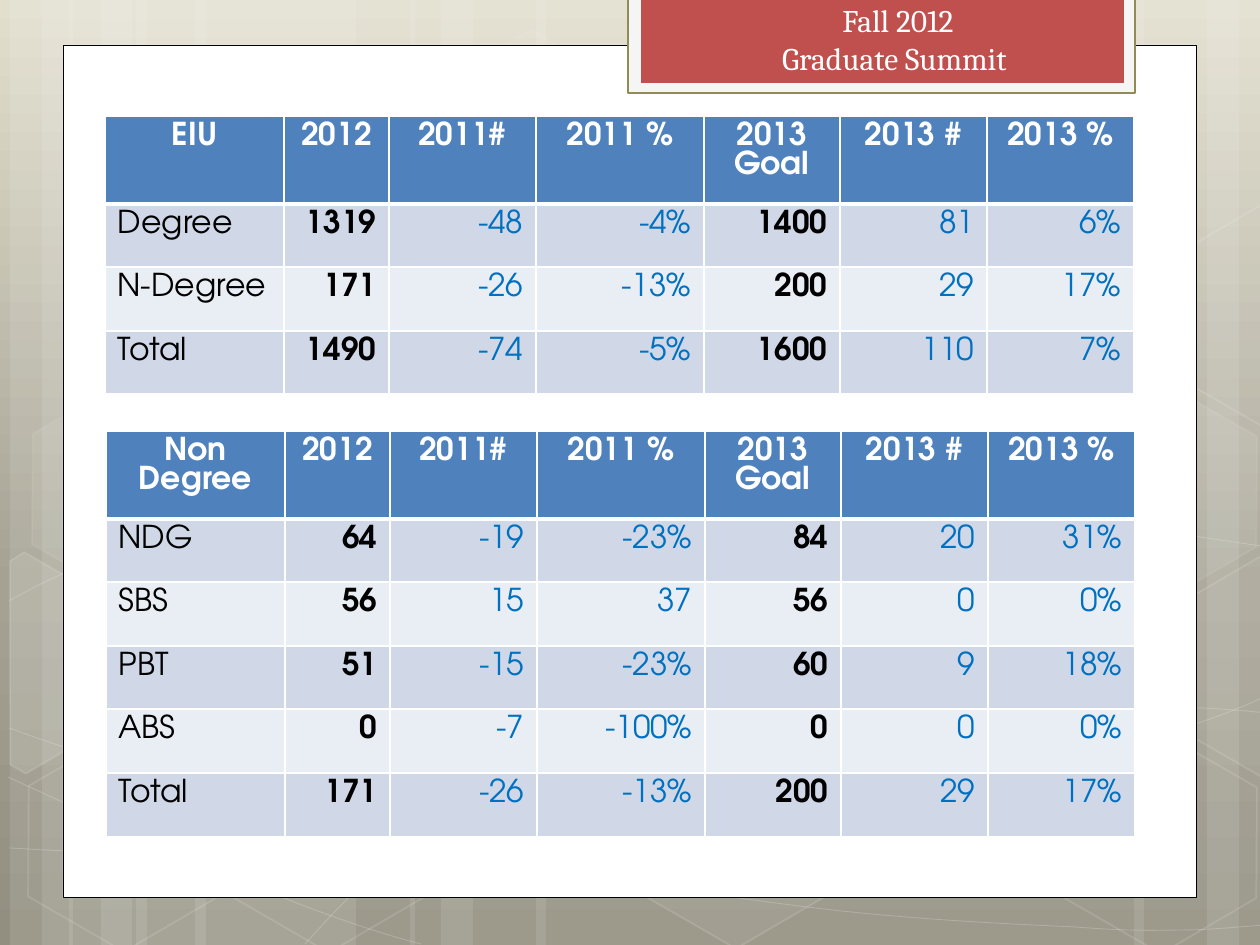
from copy import deepcopy
from dataclasses import dataclass

from lxml.etree import SubElement
from pptx import Presentation
from pptx.dml.color import RGBColor
from pptx.enum.shapes import MSO_SHAPE
from pptx.enum.text import MSO_ANCHOR, MSO_AUTO_SIZE, PP_ALIGN
from pptx.oxml.ns import qn
from pptx.util import Emu, Pt

SCALE = 914400 / 126
WHITE, BLACK, BLUE = "FFFFFF", "000000", "0070C0"
HEADER_FILL, BAND_FILLS = "4F81BD", ("D0D8E8", "E9EDF4")
COLUMN_WIDTHS = (179, 105, 147, 168, 136, 147, 147)
ROW_HEIGHTS = (88, 63, 64, 63, 64, 64)
BOLD_COLUMNS = (1, 4)
HEADINGS = ("2012", "2011#", "2011 %", "2013 Goal", "2013 #", "2013 %")


@dataclass
class Paint:
    fill: str = ""
    fill_opacity: int = 100
    line: str = ""
    line_width: float = 1
    line_opacity: int = 100


@dataclass
class Hexagon:
    left: int
    top: int
    fill_opacity: int
    line_opacity: int


@dataclass
class CutHexagon:
    points: tuple
    fill_opacity: int


@dataclass
class EnrollmentTable:
    left: int
    top: int
    title: str
    rows: tuple


BARS = (
    (136, 220), (10, 63), (42, 105), (195, 220), (69, 63), (101, 105),
    (924, 220), (1207, 63), (1134, 105), (536, 388), (410, 63), (441, 105),
)
CURVES = (
    ((9, 848), (77, 852), (145, 855), (239, 854), (334, 853), (451, 851), (577, 838),
     (703, 825), (882, 801), (998, 777), (1113, 753), (1231, 716), (1269, 694)),
    ((9, 601), (45, 581), (82, 562), (152, 543), (224, 524), (326, 496), (437, 488),
     (549, 479), (685, 478), (824, 488), (963, 498), (1193, 537), (1269, 547)),
    ((8, 777), (160, 847), (311, 916), (421, 944)),
    ((9, 728), (48, 742), (88, 756), (161, 776), (234, 795), (344, 827), (450, 848),
     (554, 869), (687, 892), (791, 905), (896, 919), (1008, 924), (1075, 927),
     (1140, 932), (1158, 930), (1191, 930), (1223, 929), (1246, 926), (1269, 925)),
    ((305, 944), (328, 919), (350, 893), (381, 871), (411, 848), (454, 824), (489, 805),
     (524, 787), (546, 780), (592, 767), (638, 755), (722, 737), (766, 728),
     (811, 719), (818, 719), (857, 717), (896, 713), (958, 709), (1000, 708),
     (1045, 707), (1116, 708), (1116, 708), (1144, 708), (1173, 708), (1201, 708),
     (1223, 709), (1245, 711), (1256, 712), (1268, 713), (1264, 712), (1268, 713)),
)
HEXAGONS = (
    Hexagon(421, 45, 4, 8), Hexagon(626, 742, 6, 12), Hexagon(14, 745, 0, 12),
    Hexagon(18, 393, 7, 8), Hexagon(219, 746, 0, 12), Hexagon(949, 571, 10, 12),
    Hexagon(1051, 747, 0, 12), Hexagon(1051, 396, 7, 8),
)
RIGHT_CUT = ((1155, 654), (1209, 559), (1221, 559), (1326, 741), (1321, 750), (1210, 750))
CUT_HEXAGONS = (
    CutHexagon(((-42, 594), (-34, 579), (77, 579), (132, 675), (78, 770), (60, 770)), 10),
    CutHexagon(RIGHT_CUT, 4),
    CutHexagon(tuple((x, y - 351) for x, y in RIGHT_CUT), 0),
)
TABLES = (
    EnrollmentTable(105, 116, "EIU", (
        ("Degree", "1319", "-48", "-4%", "1400", "81", "6%"),
        ("N-Degree", "171", "-26", "-13%", "200", "29", "17%"),
        ("Total", "1490", "-74", "-5%", "1600", "110", "7%"),
    )),
    EnrollmentTable(106, 431, "Non Degree", (
        ("NDG", "64", "-19", "-23%", "84", "20", "31%"),
        ("SBS", "56", "15", "37", "56", "0", "0%"),
        ("PBT", "51", "-15", "-23%", "60", "9", "18%"),
        ("ABS", "0", "-7", "-100%", "0", "0", "0%"),
        ("Total", "171", "-26", "-13%", "200", "29", "17%"),
    )),
)


def px(length: int) -> Emu:
    return Emu(round(length * SCALE))


def color(value: str) -> RGBColor:
    return RGBColor.from_string(value)


def set_opacity(shape, location: str, percent: int) -> None:
    if percent < 100:
        for item in shape.element.xpath(f"./p:spPr/{location}a:solidFill/a:srgbClr"):
            SubElement(item, qn("a:alpha"), val=str(percent * 1000))


def apply_paint(shape, paint: Paint) -> None:
    shape.shadow.inherit = False
    if paint.fill and paint.fill_opacity:
        shape.fill.solid()
        shape.fill.fore_color.rgb = color(paint.fill)
        set_opacity(shape, "", paint.fill_opacity)
    else:
        shape.fill.background()
    if paint.line:
        shape.line.color.rgb = color(paint.line)
        shape.line.width = Pt(paint.line_width)
        set_opacity(shape, "a:ln/", paint.line_opacity)
    else:
        shape.line.fill.background()


def draw_shape(page, kind, left: int, top: int, width: int, height: int, paint: Paint):
    shape = page.shapes.add_shape(kind, px(left), px(top), px(width), px(height))
    apply_paint(shape, paint)
    return shape


def draw_outline(page, points: tuple, closed: bool, paint: Paint):
    builder = page.shapes.build_freeform(*points[0], scale=SCALE)
    builder.add_line_segments(points[1:], close=closed)
    shape = builder.convert_to_shape()
    apply_paint(shape, paint)
    return shape


def draw_curve(page, points: tuple) -> None:
    shape = draw_outline(page, points, False, Paint(line=WHITE, line_width=0.5, line_opacity=20))
    outline = shape.element.xpath(".//a:path")[0]
    segments = outline.findall(qn("a:lnTo"))
    for start in range(0, len(segments), 3):
        bezier = SubElement(outline, qn("a:cubicBezTo"))
        for segment in segments[start:start + 3]:
            bezier.append(segment[0])
            outline.remove(segment)


def draw_background(page) -> None:
    fill = page.background.fill
    fill.gradient()
    fill.gradient_angle = 270
    stops = page.element.xpath(".//a:gsLst")[0]
    stops.append(deepcopy(stops[-1]))
    shades = ((0, "E2DFCF"), (0.62, "A5A293"), (1, "928F80"))
    for stop, (position, shade) in zip(fill.gradient_stops, shades):
        stop.position = position
        stop.color.rgb = color(shade)
    for left, width in BARS:
        draw_shape(page, MSO_SHAPE.RECTANGLE, left, 0, width, 945, Paint(WHITE, 10))
    for curve in CURVES:
        draw_curve(page, curve)
    for item in HEXAGONS:
        paint = Paint(WHITE, item.fill_opacity, WHITE, 1, item.line_opacity)
        hexagon = draw_shape(page, MSO_SHAPE.HEXAGON, item.left, item.top, 220, 192, paint)
        hexagon.adjustments[0] = 0.285
        hexagon.rotation = 30
    for item in CUT_HEXAGONS:
        draw_outline(page, item.points, True, Paint(WHITE, item.fill_opacity, WHITE, 1, 12)).rotation = 30


def draw_banner(page) -> None:
    draw_shape(page, MSO_SHAPE.RECTANGLE, 63, 45, 1134, 853, Paint(WHITE, line=BLACK, line_width=0.5))
    draw_shape(page, MSO_SHAPE.RECTANGLE, 628, -3, 507, 96, Paint("F5F5F5", line="948A54", line_width=1.25))
    draw_shape(page, MSO_SHAPE.RECTANGLE, 641, -3, 483, 86, Paint("C0504D"))
    title = page.shapes.title
    page.shapes.element.append(title.element)
    title.left, title.top, title.width, title.height = map(px, (662, -5, 472, 89))
    box = title.text_frame
    box.auto_size = MSO_AUTO_SIZE.NONE
    box.vertical_anchor = MSO_ANCHOR.TOP
    box.text = "Fall 2012\nGraduate Summit "
    for para in box.paragraphs:
        para.alignment = PP_ALIGN.CENTER
        para.space_before = Pt(0)
        para.font.size = Pt(18)
        para.font.name = "Cambria"
        para.font.color.rgb = color(WHITE)


def format_cell(cell, text: str, row: int, column: int) -> None:
    header = row == 0
    properties = cell._tc.get_or_add_tcPr()
    for side in "LRTB":
        thick = (header and side == "B") or (row == 1 and side == "T")
        border = SubElement(properties, qn(f"a:ln{side}"), w=str(Pt(3 if thick else 1)))
        SubElement(SubElement(border, qn("a:solidFill")), qn("a:srgbClr"), val=WHITE)
    cell.fill.solid()
    cell.fill.fore_color.rgb = color(HEADER_FILL if header else BAND_FILLS[(row - 1) % 2])
    cell.text = text
    para = cell.text_frame.paragraphs[0]
    para.alignment = PP_ALIGN.CENTER if header else PP_ALIGN.RIGHT if column else PP_ALIGN.LEFT
    para.font.name = "TeX Gyre Adventor"
    para.font.size = Pt(18)
    para.font.bold = header or column in BOLD_COLUMNS
    para.font.color.rgb = color(WHITE if header else BLACK if column in (0, *BOLD_COLUMNS) else BLUE)


def draw_table(page, data: EnrollmentTable) -> None:
    rows = ((data.title, *HEADINGS), *data.rows)
    heights = ROW_HEIGHTS[:len(rows)]
    area = map(px, (data.left, data.top, sum(COLUMN_WIDTHS), sum(heights)))
    table = page.shapes.add_table(len(rows), len(COLUMN_WIDTHS), *area).table
    for column, width in zip(table.columns, COLUMN_WIDTHS):
        column.width = px(width)
    for row_index, (texts, height) in enumerate(zip(rows, heights)):
        table.rows[row_index].height = px(height)
        for column_index, text in enumerate(texts):
            format_cell(table.cell(row_index, column_index), text, row_index, column_index)


def main() -> None:
    deck = Presentation()
    deck.slide_width, deck.slide_height = px(1260), px(945)
    page = deck.slides.add_slide(deck.slide_layouts[5])
    draw_background(page)
    draw_banner(page)
    for data in TABLES:
        draw_table(page, data)
    deck.save("out.pptx")


if __name__ == "__main__":
    main()
